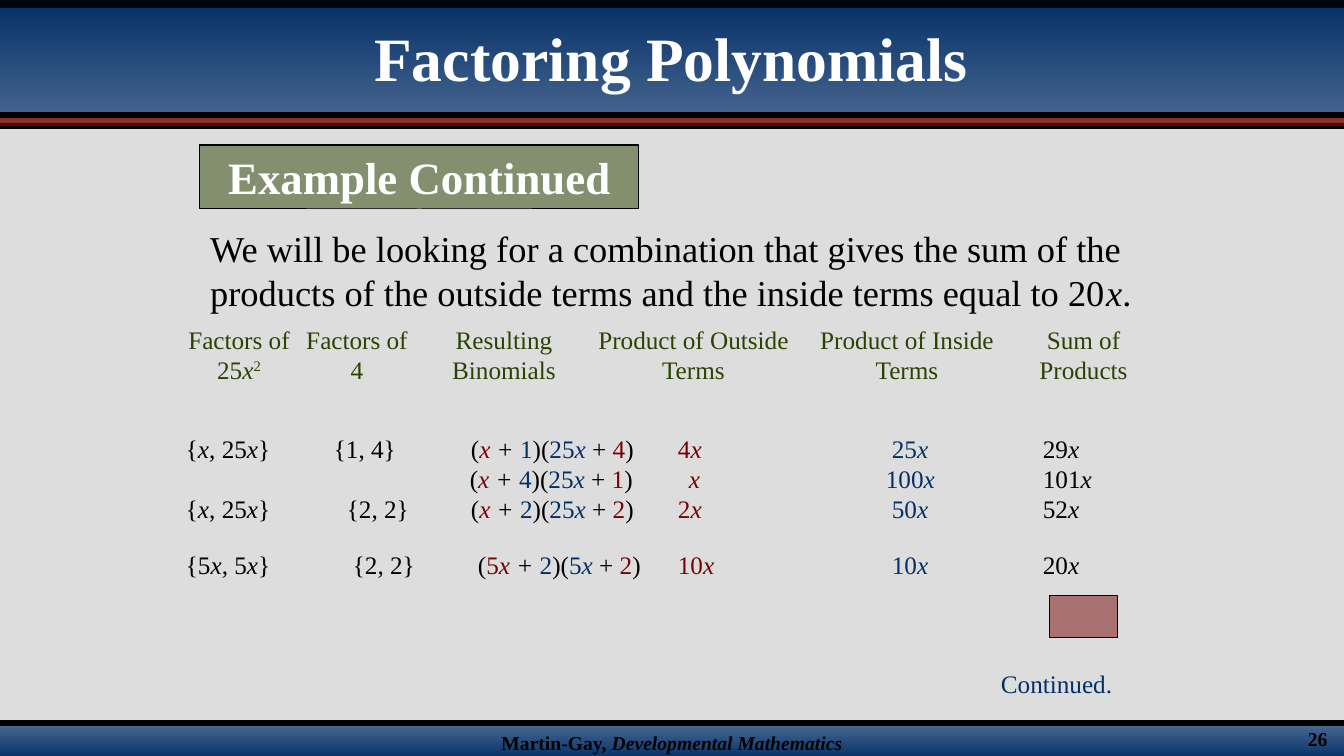
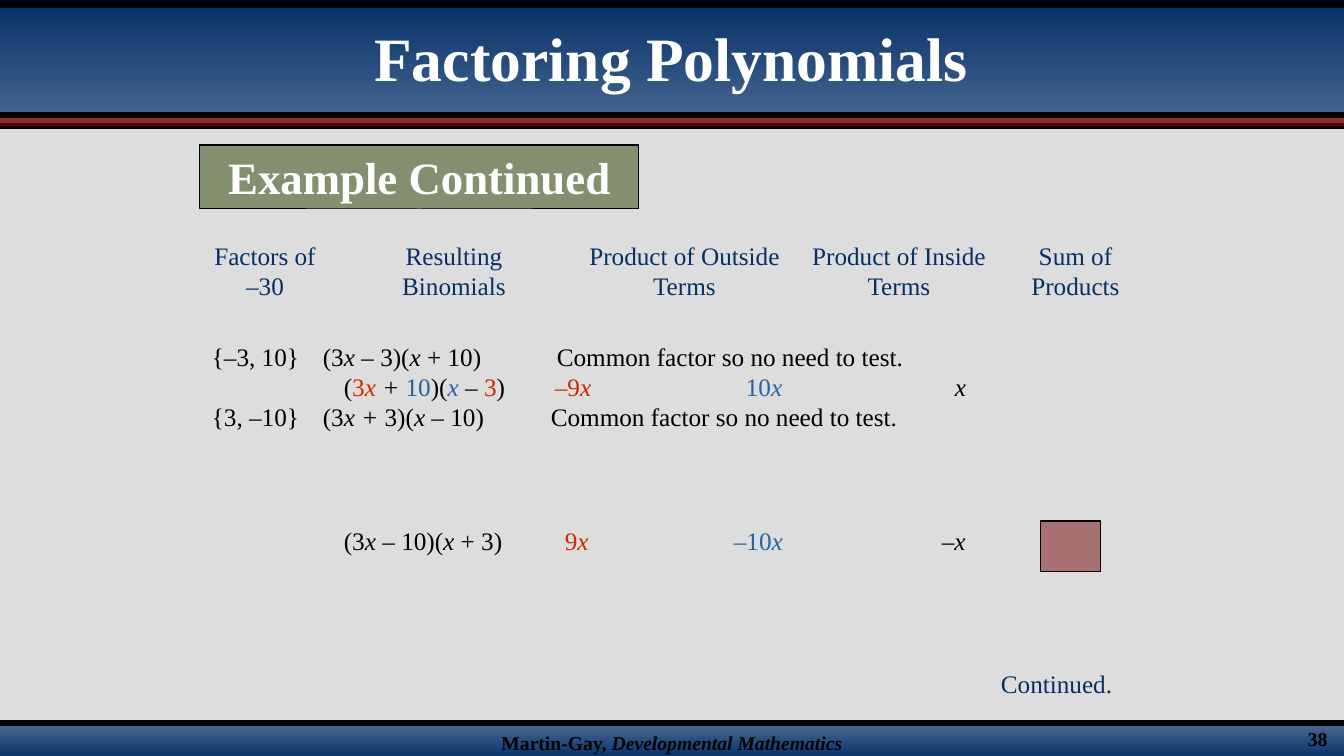
from dataclasses import dataclass

from pptx import Presentation
from pptx.dml.color import RGBColor as Rgb
from pptx.enum.shapes import MSO_CONNECTOR as Link, MSO_SHAPE as Form
from pptx.enum.text import MSO_ANCHOR as Anchor, MSO_AUTO_SIZE as Fit, PP_ALIGN as Align
from pptx.oxml.ns import qn
from pptx.oxml.xmlchemy import OxmlElement as Node
from pptx.util import Emu, Pt

SCALE = 914400 / 100.8  # EMU in one px
WIDE, HIGH = 1344, 756
INSET = 10  # side margin of a text box


@dataclass(frozen=True)
class Theme:
    font: str = "Times New Roman"
    paper: str = "DDDDDD"
    ink: str = "000000"
    white: str = "FFFFFF"
    navy: str = "043066"
    steel: str = "46658F"
    wine: str = "740404"
    olive: str = "2D4202"
    flame: str = "D02800"
    azure: str = "2563A1"
    title: int = 44
    badge: int = 32
    lead: int = 26
    text: int = 18
    small: int = 14


T = Theme()

# Text marks: * italic, ° raised, ~ outside colour, ^ inside colour, | base colour
TITLE = "Factoring Polynomials"
BADGE = "Example Continued"
MORE = "Continued."
FOOTER = "Martin-Gay, *Developmental Mathematics*"

# Heads are (left, width, text); a row is a list of (left, text) cells
SLIDES = [
    dict(
        page="26",
        hues={"~": T.wine, "^": T.navy},
        lead="We will be looking for a combination that gives the sum of the products "
             "of the outside terms and the inside terms equal to 20*x*.",
        head_top=319,
        head_hue=T.olive,
        heads=[
            (176, 126, "Factors of 25*x*°2°"),
            (294, 126, "Factors of 4"),
            (420, 168, "Resulting Binomials"),
            (580, 227, "Product of Outside Terms"),
            (806, 202, "Product of Inside Terms"),
            (1008, 151, "Sum of Products"),
        ],
        grid=(176, 428, 966, 102),
        rows=[
            [(186, "{*x*, 25*x*}"), (334, "{1, 4}"), (471, "(~*x*|* + *^1|)(^25*x*| + ~4|)"),
             (678, "~4*x*"), (892, "^25*x*"), (1043, "29*x*")],
            [(470, "(~*x*|* + *^4|)(^25*x*| + ~1|)"),
             (689, "~*x*"), (886, "^100*x*"), (1043, "101*x*")],
            [(186, "{*x*, 25*x*}"), (347, "{2, 2}"), (471, "(~*x*|* + *^2|)(^25*x*| + ~2|)"),
             (678, "~2*x*"), (892, "^50*x*"), (1043, "52*x*")],
        ],
        mark=(1050, 596, 68, 42),
        last_top=544,
        last=[(186, "{5*x*, 5*x*}"), (353, "{2, 2}"), (478, "(~5*x*|* + *^2|)(^5*x*| + ~2|)"),
              (678, "~10*x*"), (892, "^10*x*"), (1043, "20*x*")],
    ),
    dict(
        page="38",
        hues={"~": T.flame, "^": T.azure},
        lead=None,
        head_top=235,
        head_hue=T.navy,
        heads=[
            (202, 126, "Factors of –30"),
            (370, 168, "Resulting Binomials"),
            (571, 227, "Product of Outside Terms"),
            (798, 202, "Product of Inside Terms"),
            (1000, 151, "Sum of Products"),
        ],
        grid=(202, 336, 950, 102),
        rows=[
            [(212, "{–3, 10}"), (323, "(3*x – *3)(*x* + 10)"),
             (557, "Common factor so no need to test.")],
            [(344, "(~3*x*|* + *^10|)(^*x*| – ~3|)"),
             (555, "~–9*x*"), (746, "^10*x*"), (955, "*x*")],
            [(212, "{3, –10}"), (323, "(3*x + *3)(*x* – 10)"),
             (551, "Common factor so no need to test.")],
        ],
        mark=(1041, 521, 60, 51),
        last_top=520,
        last=[(344, "(3*x – *10)(*x* + 3)"),
              (565, "~9*x*"), (734, "^–10*x*"), (942, "–*x*")],
    ),
]


def px(num):
    return Emu(round(num * SCALE))


def place(shape, *box):
    shape.left, shape.top, shape.width, shape.height = map(px, box)


# Text
def write(para, text, size, hue=T.ink, bold=False, hues=None, align=Align.LEFT):
    """Add marked text to a paragraph, one run for each change of style."""
    para.alignment = align
    para.space_before = Pt(0)
    tones = {"|": hue, **(hues or {})}
    flags = {"*": False, "°": False}
    tone, part = hue, ""

    def flush():
        if part:
            run = para.add_run()
            run.text = part
            font = run.font
            font.name, font.size, font.bold = T.font, Pt(size), bold
            font.italic = flags["*"]
            font.color.rgb = Rgb.from_string(tone)
            if flags["°"]:
                run._r.get_or_add_rPr().set("baseline", "30000")

    for char in text:
        if char in flags or char in tones:
            flush()
            part = ""
            if char in flags:
                flags[char] = not flags[char]
            else:
                tone = tones[char]
        else:
            part += char
    flush()


def add_text(slide, box, text, size, wrap=True, **look):
    shape = slide.shapes.add_textbox(*map(px, box))
    frame = shape.text_frame
    frame.word_wrap = wrap
    write(frame.paragraphs[0], text, size, **look)


def add_rows(slide, box, rows, hues):
    """Set each row as one paragraph whose cells start at tab stops."""
    frame = slide.shapes.add_textbox(*map(px, box)).text_frame
    frame.word_wrap = True
    start = box[0] + INSET
    for num, row in enumerate(rows):
        para = frame.add_paragraph() if num else frame.paragraphs[0]
        tabs = Node("a:tabLst")
        para._p.get_or_add_pPr().append(tabs)
        text = ""
        for spot, cell in row:
            if spot > start:
                stop = Node("a:tab")
                stop.set("pos", str(px(spot - start)))
                stop.set("algn", "l")
                tabs.append(stop)
                text += "\t"
            text += cell + "|"
        write(para, text, T.text, hues=hues)


def fill_lead(body, text):
    """Use the body for a plain sentence, or drop it if there is none."""
    if not text:
        body._element.getparent().remove(body._element)
        return
    place(body, 200, 221, 950, 98)
    frame = body.text_frame
    frame.word_wrap, frame.auto_size = True, Fit.NONE
    para = frame.paragraphs[0]
    props = para._p.get_or_add_pPr()
    props.set("marL", "0")
    props.set("indent", "0")
    props.append(Node("a:buNone"))
    write(para, text, T.lead)


# Shapes
def add_rect(slide, box, hue, alpha=100, edge=False):
    shape = slide.shapes.add_shape(Form.RECTANGLE, *map(px, box))
    shape.shadow.inherit = False
    if isinstance(hue, tuple):
        shape.fill.gradient()
        shape.fill.gradient_angle = 270
        for stop, tone in zip(shape.fill.gradient_stops, hue):
            stop.color.rgb = Rgb.from_string(tone)
    else:
        shape.fill.solid()
        shape.fill.fore_color.rgb = Rgb.from_string(hue)
    if alpha < 100:
        clear = Node("a:alpha")
        clear.set("val", str(alpha * 1000))
        shape._element.spPr.find(".//" + qn("a:srgbClr")).append(clear)
    if edge:
        shape.line.color.rgb = Rgb.from_string(T.ink)
        shape.line.width = Pt(0.75)
    else:
        shape.line.fill.background()
    return shape


def add_rule(slide, top):
    rule = slide.shapes.add_connector(Link.STRAIGHT, 0, px(top), px(WIDE), px(top))
    rule.line.color.rgb = Rgb.from_string(T.ink)
    rule.line.width = Pt(4)
    rule._element.spPr.append(Node("a:effectLst"))
    return rule


def set_layout(layout, slide):
    """Draw the shared bands once and hand them to the layout."""
    for holder in list(layout.placeholders):
        if holder.placeholder_format.idx >= 10:  # date, footer, number
            holder._element.getparent().remove(holder._element)
    bands = [
        add_rule(slide, 126),
        add_rect(slide, (0, 118, WIDE, 8), T.wine, 80),
        add_rect(slide, (0, 0, WIDE, 118), (T.navy, T.steel)),
        add_rect(slide, (0, 0, WIDE, 8), T.ink, 90),
        add_rule(slide, 115),
        add_rect(slide, (0, 726, WIDE, 33), (T.steel, T.navy)),
        add_rule(slide, 723),
    ]
    foot = bands[5].text_frame
    foot.word_wrap, foot.vertical_anchor = False, Anchor.MIDDLE
    write(foot.paragraphs[0], FOOTER, T.small, bold=True, align=Align.CENTER)
    for spot, band in enumerate(bands, 2):
        layout.shapes._spTree.insert(spot, band._element)


def fill_slide(slide, data):
    # Title, badge and page number
    title = slide.shapes.title
    place(title, 218, 23, 907, 67)
    frame = title.text_frame
    frame.auto_size, frame.vertical_anchor = Fit.NONE, Anchor.MIDDLE
    write(frame.paragraphs[0], TITLE, T.title, T.white, True, align=Align.CENTER)
    badge = add_rect(slide, (200, 145, 439, 64), T.olive, 50, True)
    write(badge.text_frame.paragraphs[0], BADGE, T.badge, T.white, True, align=Align.CENTER)
    add_text(slide, (1298, 722, 43, 34), data["page"], T.small, wrap=False, bold=True)

    # Lead and column heads
    fill_lead(slide.placeholders[1], data["lead"])
    for left, width, head in data["heads"]:
        add_text(slide, (left, data["head_top"], width, 72), head, T.text,
                 hue=data["head_hue"], align=Align.CENTER)

    # Trial rows, then the last row with its mark
    left, _, width, _ = data["grid"]
    add_rows(slide, data["grid"], data["rows"], data["hues"])
    add_rect(slide, data["mark"], T.wine, 50, True)
    add_rows(slide, (left, data["last_top"], width, 40), [data["last"]], data["hues"])
    add_text(slide, (991, 663, 133, 40), MORE, T.text, wrap=False, hue=T.navy)


def main():
    prs = Presentation()
    prs.slide_width, prs.slide_height = px(WIDE), px(HIGH)
    back = prs.slide_master.background.fill
    back.solid()
    back.fore_color.rgb = Rgb.from_string(T.paper)
    layout = prs.slide_layouts[1]
    for num, data in enumerate(SLIDES):
        slide = prs.slides.add_slide(layout)
        if num == 0:
            set_layout(layout, slide)
        fill_slide(slide, data)
    prs.save("out.pptx")


if __name__ == "__main__":
    main()
